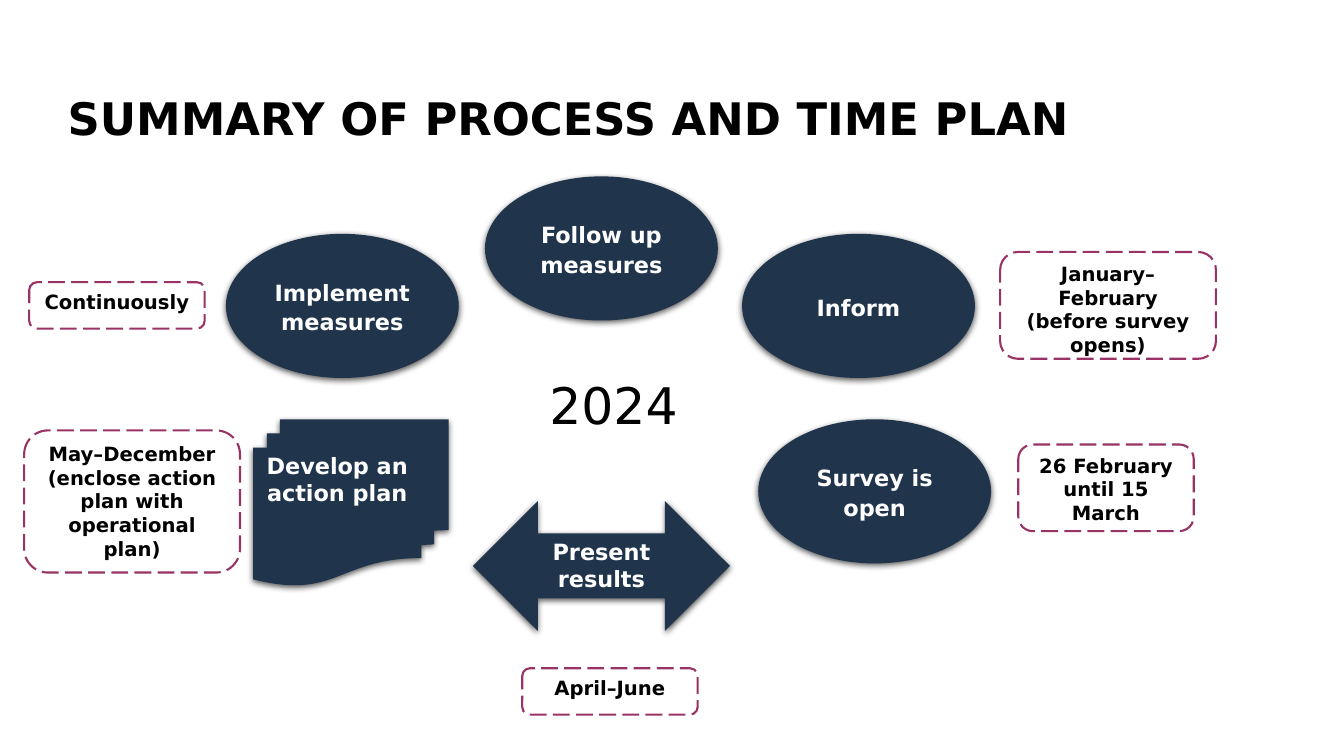
from lxml import etree
from pptx import Presentation
from pptx.dml.color import RGBColor
from pptx.enum.dml import MSO_LINE
from pptx.enum.shapes import MSO_SHAPE
from pptx.enum.text import MSO_ANCHOR, PP_ALIGN
from pptx.oxml.ns import qn
from pptx.util import Inches, Pt

NAVY = RGBColor(0x20, 0x35, 0x4C)
PLUM = RGBColor(0x99, 0x33, 0x66)
WHITE = RGBColor(0xFF, 0xFF, 0xFF)
BLACK = RGBColor(0x00, 0x00, 0x00)
FONT = "DejaVu Sans"
ELLIPSE, ROUNDED = MSO_SHAPE.OVAL, MSO_SHAPE.ROUNDED_RECTANGLE
ARROW, DOCUMENTS = MSO_SHAPE.LEFT_RIGHT_ARROW, MSO_SHAPE.FLOWCHART_MULTIDOCUMENT
TOP, MIDDLE, BOTTOM = MSO_ANCHOR.TOP, MSO_ANCHOR.MIDDLE, MSO_ANCHOR.BOTTOM
LEFT, CENTER = PP_ALIGN.LEFT, PP_ALIGN.CENTER
LONG_DASH = MSO_LINE.LONG_DASH

prs = Presentation()
prs.slide_width, prs.slide_height = Inches(13.33), Inches(7.5)
slide = prs.slides.add_slide(prs.slide_layouts[6])


def write(shape, text, size, color, bold=True, align=CENTER, anchor=TOP, spacing=1.0):
    frame = shape.text_frame
    frame.word_wrap = True
    frame.vertical_anchor = anchor
    paragraph = frame.paragraphs[0]
    paragraph.alignment = align
    paragraph.line_spacing = spacing
    run = paragraph.add_run()
    run.text = text
    run.font.name, run.font.size, run.font.bold = FONT, Pt(size), bold
    run.font.color.rgb = color
    return frame


def add_filled(kind, left, top, width, height, fill):
    shape = slide.shapes.add_shape(
        kind, Inches(left), Inches(top), Inches(width), Inches(height))
    shape.shadow.inherit = False
    shape.fill.solid()
    shape.fill.fore_color.rgb = fill
    shape.line.fill.background()
    return shape


# Title
title = slide.shapes.add_textbox(Inches(0.67), Inches(0.3), Inches(12), Inches(1.14))
title_frame = write(title, "SUMMARY OF PROCESS AND TIME PLAN", 32, BLACK,
                    align=LEFT, anchor=BOTTOM, spacing=0.9)
title_frame.margin_left = title_frame.margin_right = 0
title_frame.margin_top = title_frame.margin_bottom = 0

# Year in the middle of the cycle
year = add_filled(MSO_SHAPE.RECTANGLE, 5.25, 3.58, 1.67, 0.87, WHITE)
write(year, "2024", 36, BLACK, bold=False, anchor=MIDDLE)

# Steps of the process, clockwise from the top
steps = [
    ("Follow up measures", ELLIPSE, 4.81, 1.75, 2.31, 1.43),
    ("Inform", ELLIPSE, 7.36, 2.32, 2.31, 1.43),
    ("Survey is open", ELLIPSE, 7.52, 4.16, 2.31, 1.43),
    ("Present results", ARROW, 4.69, 4.97, 2.55, 1.29),
    ("Develop an action plan", DOCUMENTS, 2.51, 4.16, 1.94, 1.65),
    ("Implement measures", ELLIPSE, 2.24, 2.32, 2.31, 1.43),
]
for text, kind, left, top, width, height in steps:
    step = add_filled(kind, left, top, width, height, NAVY)
    if kind == ELLIPSE:
        frame = write(step, text, 16, WHITE, anchor=MIDDLE, spacing=1.1)
        frame.margin_left = frame.margin_right = Inches(0.07)
        frame.margin_top = frame.margin_bottom = Inches(0.04)
    else:
        write(step, text, 16, WHITE)
    # Soft shadow straight below
    effects = step._element.spPr.find(qn("a:effectLst"))
    shadow = etree.SubElement(effects, qn("a:outerShdw"), blurRad=str(Pt(4.5)),
                              dist=str(Pt(1.5)), dir="5400000", rotWithShape="0")
    shadow_color = etree.SubElement(shadow, qn("a:srgbClr"), val=str(BLACK))
    etree.SubElement(shadow_color, qn("a:alpha"), val="63000")

# Dates beside the steps
dates = [
    ("January–February (before survey opens)", 9.92, 2.5, 2.14, 1.06),
    ("26 February until 15 March", 10.1, 4.41, 1.74, 0.86),
    ("April–June", 5.18, 6.63, 1.74, 0.46),
    ("May–December (enclose action plan with operational plan)", 0.24, 4.27, 2.14, 1.41),
    ("Continuously", 0.29, 2.8, 1.74, 0.46),
]
for text, left, top, width, height in dates:
    date = add_filled(ROUNDED, left, top, width, height, WHITE)
    date.line.color.rgb = PLUM
    date.line.width = Pt(1.5)
    date.line.dash_style = LONG_DASH
    write(date, text, 14, BLACK)

prs.save("out.pptx")
